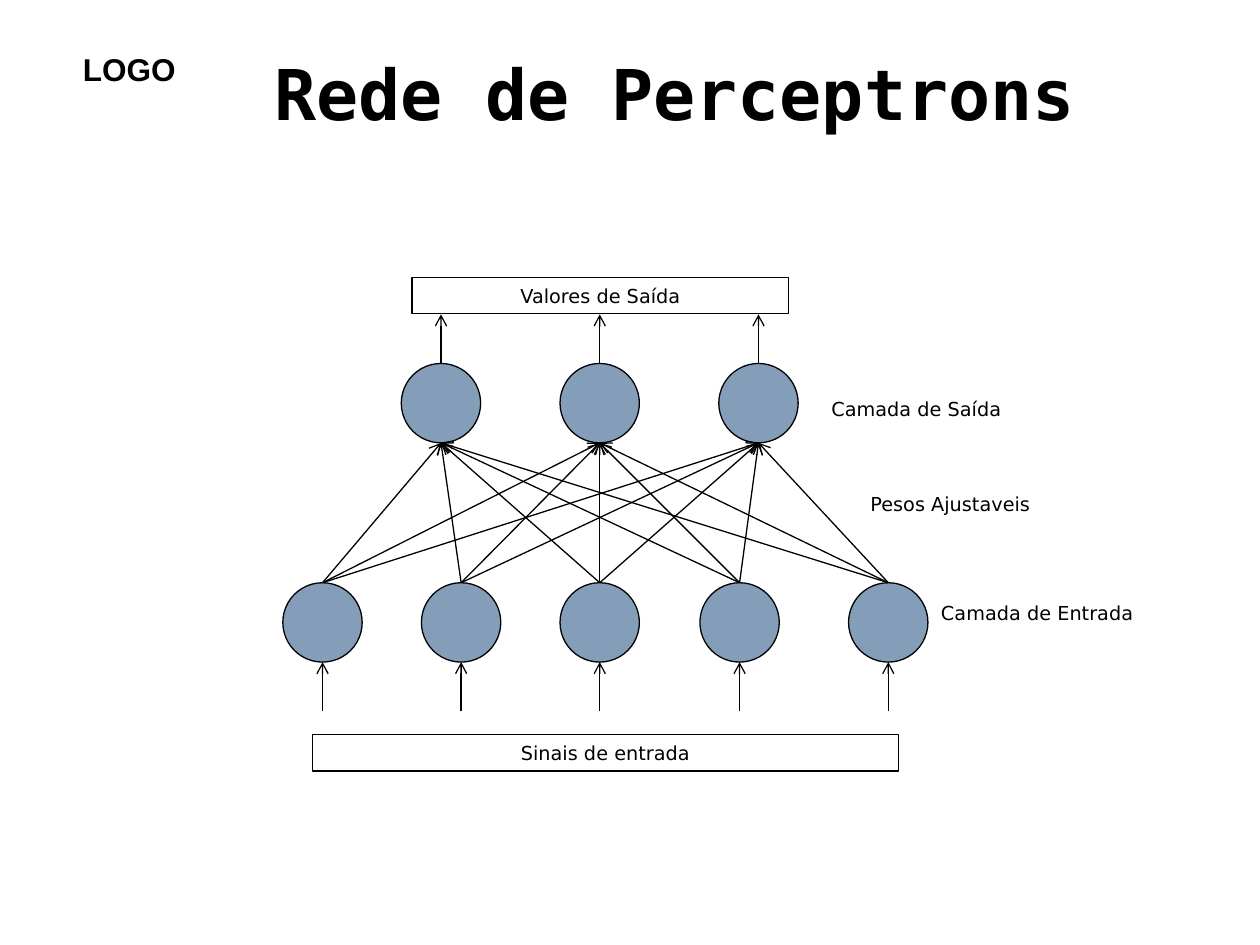
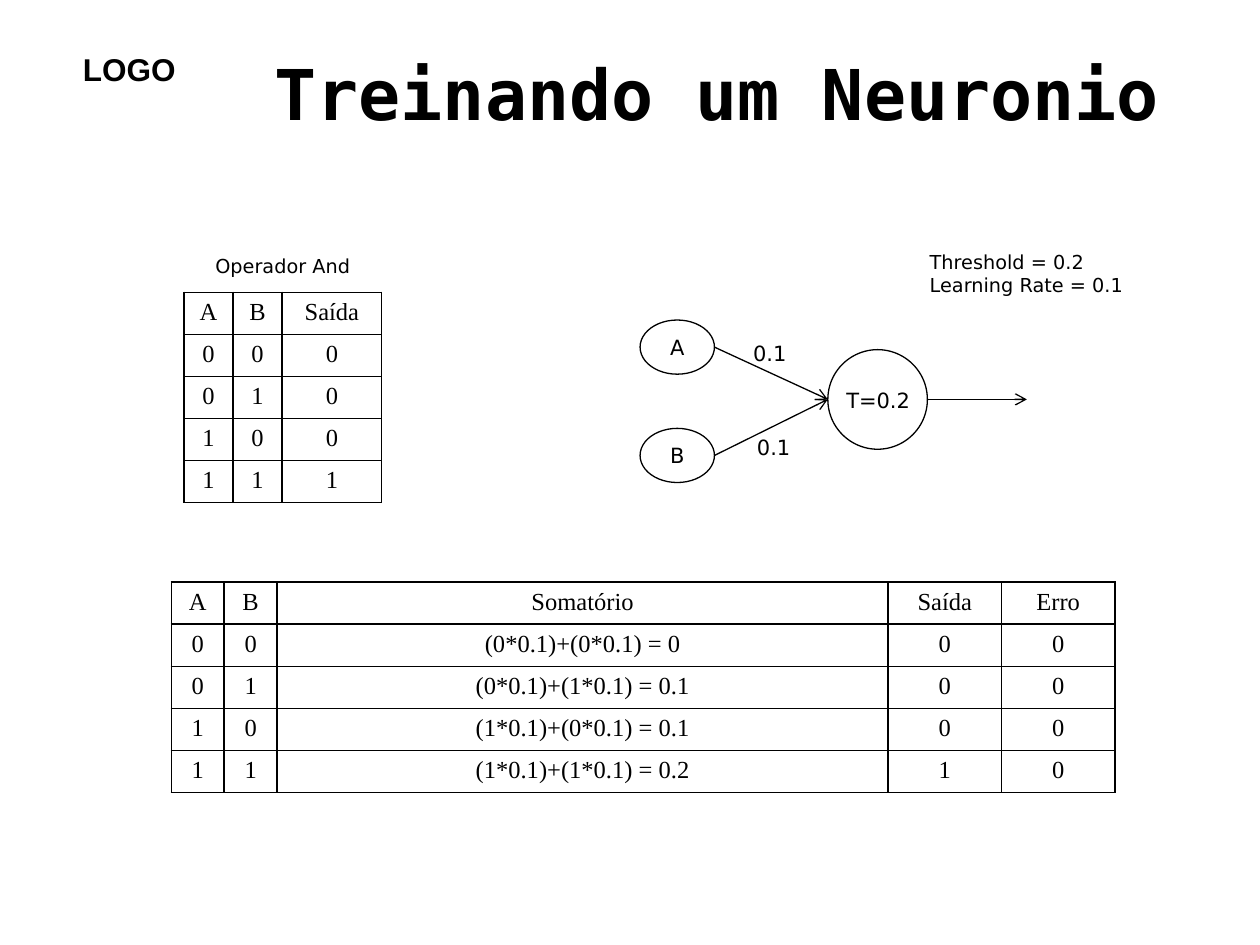
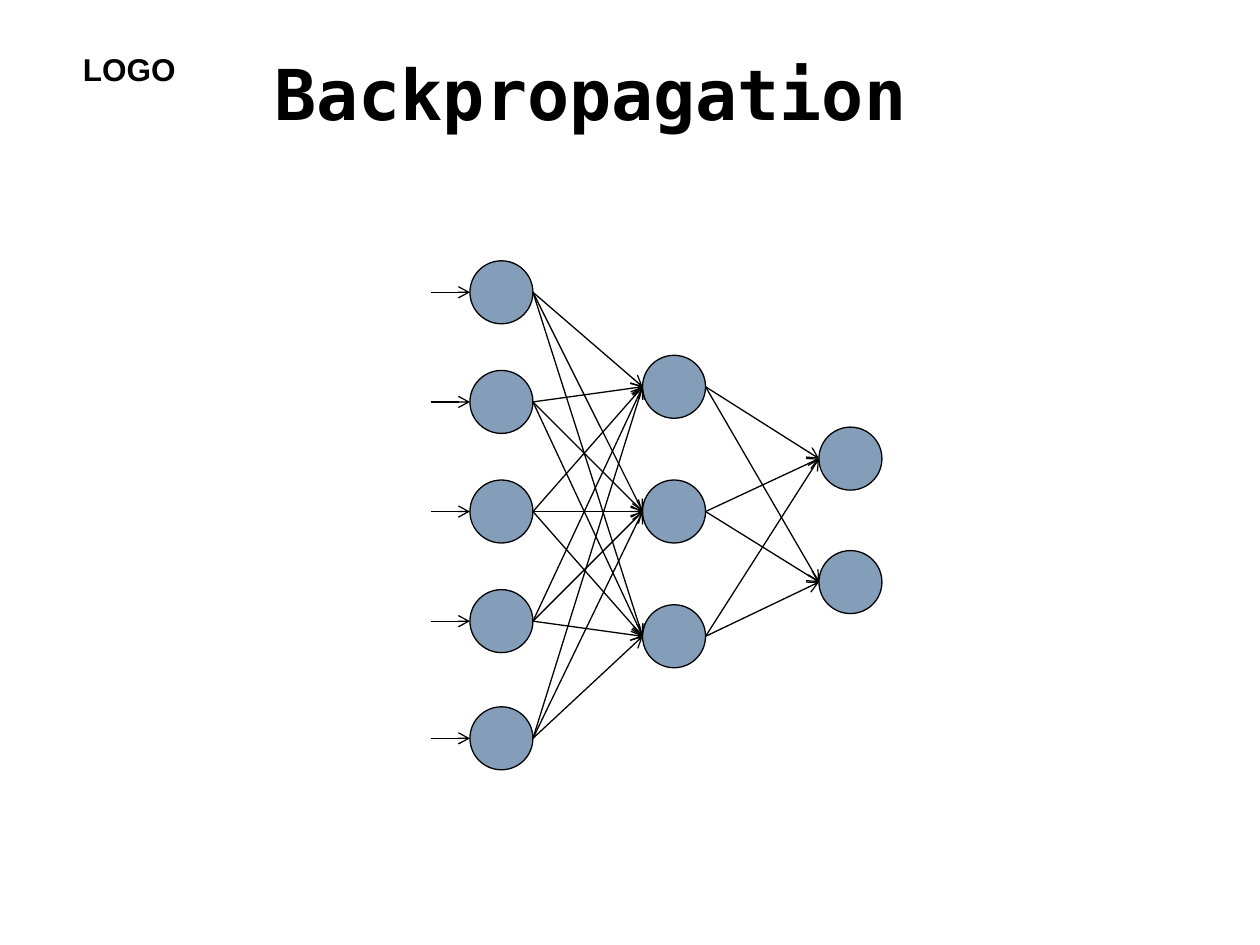
from itertools import product

from lxml.etree import SubElement
from pptx import Presentation
from pptx.dml.color import RGBColor
from pptx.enum.shapes import MSO_CONNECTOR, MSO_SHAPE
from pptx.enum.text import MSO_ANCHOR as ANCHOR, PP_ALIGN as ALIGN
from pptx.oxml.ns import qn
from pptx.util import Inches, Pt

# Shared look
INK = "000000"
NODE_FILL = "849EBA"
LINE_WIDTH = 0.75
TITLE = {"name": "DejaVu Sans Mono", "size": Pt(40), "bold": True}
LOGO = {"name": "Arial", "size": Pt(18), "bold": True}
LABEL = {"name": "DejaVu Sans", "size": Pt(11)}
NEURON = {"name": "DejaVu Sans", "size": Pt(12)}
CELL = {"name": "Times New Roman", "size": Pt(14)}
ROW_HEIGHT = 0.33


def color(hex_value):
    return RGBColor.from_string(hex_value)


def write(frame, lines, style, align=ALIGN.LEFT):
    for index, line in enumerate(lines):
        paragraph = frame.add_paragraph() if index else frame.paragraphs[0]
        paragraph.alignment = align
        run = paragraph.add_run()
        run.text = line
        for name, value in style.items():
            setattr(run.font, name, value)
        run.font.color.rgb = color(INK)


def add_text(slide, box, lines, style, align=ALIGN.LEFT, anchor=ANCHOR.TOP, wrap=True):
    frame = slide.shapes.add_textbox(*map(Inches, box)).text_frame
    frame.word_wrap = wrap
    frame.vertical_anchor = anchor
    write(frame, lines, style, align)


def add_outline(slide, kind, box, fill=None, label=None, style=LABEL):
    shape = slide.shapes.add_shape(kind, *map(Inches, box))
    shape.shadow.inherit = False
    if fill:
        shape.fill.solid()
        shape.fill.fore_color.rgb = color(fill)
    else:
        shape.fill.background()
    shape.line.color.rgb = color(INK)
    shape.line.width = Pt(LINE_WIDTH)
    if label:
        shape.text_frame.vertical_anchor = ANCHOR.MIDDLE
        write(shape.text_frame, [label], style, ALIGN.CENTER)


def add_arrow(slide, start, end):
    arrow = slide.shapes.add_connector(MSO_CONNECTOR.STRAIGHT, *map(Inches, (*start, *end)))
    arrow.line.color.rgb = color(INK)
    arrow.line.width = Pt(LINE_WIDTH)
    properties = arrow.element.spPr
    SubElement(properties.find(qn("a:ln")), qn("a:tailEnd"), type="arrow")
    SubElement(properties, qn("a:effectLst"))


def add_layer(slide, centers, diameter):
    for x, y in centers:
        box = (x - diameter / 2, y - diameter / 2, diameter, diameter)
        add_outline(slide, MSO_SHAPE.OVAL, box, NODE_FILL)


def shift(points, dx=0.0, dy=0.0):
    return [(x + dx, y + dy) for x, y in points]


def connect_all(slide, starts, ends):
    for start, end in product(starts, ends):
        add_arrow(slide, start, end)


def connect_pairs(slide, starts, ends):
    for start, end in zip(starts, ends):
        add_arrow(slide, start, end)


def add_grid(slide, left, top, widths, rows):
    box = (left, top, sum(widths), ROW_HEIGHT * len(rows))
    table = slide.shapes.add_table(len(rows), len(widths), *map(Inches, box)).table
    for column, width in zip(table.columns, widths):
        column.width = Inches(width)
    for row, values in zip(table.rows, rows):
        row.height = Inches(ROW_HEIGHT)
        for cell, value in zip(row.cells, values):
            write(cell.text_frame, [value], CELL, ALIGN.CENTER)
            add_borders(cell)
            cell.fill.background()


def add_borders(cell):
    properties = cell._tc.get_or_add_tcPr()
    for side in ("lnL", "lnR", "lnT", "lnB"):
        border = SubElement(properties, qn(f"a:{side}"), w=str(Pt(1)))
        fill = SubElement(border, qn("a:solidFill"))
        SubElement(fill, qn("a:srgbClr"), val=INK)


def new_slide(presentation, title):
    slide = presentation.slides.add_slide(presentation.slide_layouts[6])
    add_text(slide, (0.56, 0.35, 0.94, 0.4), ["LOGO"], LOGO, wrap=False)
    add_text(slide, (2.08, 0.25, 7.42, 0.97), [title], TITLE, anchor=ANCHOR.MIDDLE)
    return slide


# Two-layer network, signals flowing upwards
def draw_perceptrons(slide, left, top):
    diameter, stub = 0.63, 0.39
    radius = diameter / 2
    inputs = [(left + x, top + 2.74) for x in (0.32, 1.42, 2.52, 3.63, 4.81)]
    outputs = [(left + 1.26 * (i + 1), top + 1.0) for i in range(3)]
    add_layer(slide, inputs + outputs, diameter)
    connect_all(slide, shift(inputs, dy=-radius), shift(outputs, dy=radius))
    for layer in (outputs, inputs):
        offset = -radius if layer is outputs else radius + stub
        connect_pairs(slide, shift(layer, dy=offset), shift(layer, dy=offset - stub))

    # Signal bars and layer names
    for label, x, y, width in (("Valores de Saída", 1.03, 0, 2.99),
                               ("Sinais de entrada", 0.24, 3.63, 4.65)):
        add_outline(slide, MSO_SHAPE.RECTANGLE, (left + x, top + y, width, 0.29), label=label)
    for label, x, y in (("Camada de Entrada", 5.13, 2.52),
                        ("Pesos Ajustaveis", 4.57, 1.66),
                        ("Camada de Saída", 4.26, 0.9)):
        add_text(slide, (left + x, top + y, 1.73, 0.29), [label], LABEL)


# Single neuron with two weighted inputs
def draw_neuron(slide, left, top):
    width, height, diameter = 0.59, 0.43, 0.79
    neuron_x, neuron_y = left + 1.49, top + 0.63
    add_outline(slide, MSO_SHAPE.OVAL,
                (neuron_x, neuron_y - diameter / 2, diameter, diameter))
    for name, y, weight_x, weight_y in (("A", 0, 0.79, 0.11), ("B", 0.86, 0.82, 0.86)):
        add_outline(slide, MSO_SHAPE.OVAL, (left, top + y, width, height),
                    label=name, style=NEURON)
        add_arrow(slide, (left + width, top + y + height / 2), (neuron_x, neuron_y))
        add_text(slide, (left + weight_x, top + weight_y, 0.48, 0.3), ["0.1"],
                 NEURON, ALIGN.CENTER, wrap=False)
    output_x = neuron_x + diameter
    add_arrow(slide, (output_x, neuron_y), (output_x + diameter, neuron_y))
    add_text(slide, (neuron_x + 0.04, neuron_y - 0.14, 0.72, 0.3), ["T=0.2"],
             NEURON, ALIGN.CENTER, wrap=False)
    add_text(slide, (left + 2.2, top - 0.6, 1.89, 0.47),
             ["Threshold = 0.2", "Learning Rate = 0.1"], LABEL)


# Truth table of the operator, with its caption
def draw_truth_table(slide, left, top):
    rows = [("A", "B", "Saída")]
    rows += [(str(a), str(b), str(a & b)) for a, b in product((0, 1), repeat=2)]
    add_text(slide, (left - 0.08, top - 0.35, 1.73, 0.29), ["Operador And"],
             LABEL, ALIGN.CENTER)
    add_grid(slide, left, top, (0.39, 0.39, 0.79), rows)


# Weighted sum and error for each pair of inputs
def draw_training_table(slide, left, top):
    rows = [("A", "B", "Somatório", "Saída", "Erro")]
    for a, b in product((0, 1), repeat=2):
        total = f"({a}*0.1)+({b}*0.1) = {(a + b) / 10:g}"
        rows.append((str(a), str(b), total, str(a & b), "0"))
    add_grid(slide, left, top, (0.42, 0.42, 4.85, 0.9, 0.9), rows)


# Three-layer network, signals flowing to the right
def draw_backpropagation(slide, left, top):
    diameter, stub = 0.5, 0.31
    radius = diameter / 2
    inputs = [(left + 0.55, top + y) for y in (0.25, 1.12, 1.99, 2.86, 3.79)]
    hidden = [(left + 1.92, top + 1.0 + 0.99 * i) for i in range(3)]
    outputs = [(left + 3.32, top + 1.57 + 0.98 * i) for i in range(2)]
    layers = (inputs, hidden, outputs)
    for layer in layers:
        add_layer(slide, layer, diameter)
    for source, target in zip(layers, layers[1:]):
        connect_all(slide, shift(source, dx=radius), shift(target, dx=-radius))
    entries = shift(inputs, dx=-radius)
    connect_pairs(slide, shift(entries, dx=-stub), entries)


def main():
    presentation = Presentation()
    presentation.slide_width = Inches(10)
    presentation.slide_height = Inches(7.5)

    draw_perceptrons(new_slide(presentation, "Rede de Perceptrons"), 2.24, 2.2)

    training = new_slide(presentation, "Treinando um Neuronio")
    draw_neuron(training, 5.08, 2.54)
    draw_truth_table(training, 1.46, 2.32)
    draw_training_table(training, 1.36, 4.62)

    draw_backpropagation(new_slide(presentation, "Backpropagation"), 3.43, 2.07)

    presentation.save("out.pptx")


if __name__ == "__main__":
    main()
